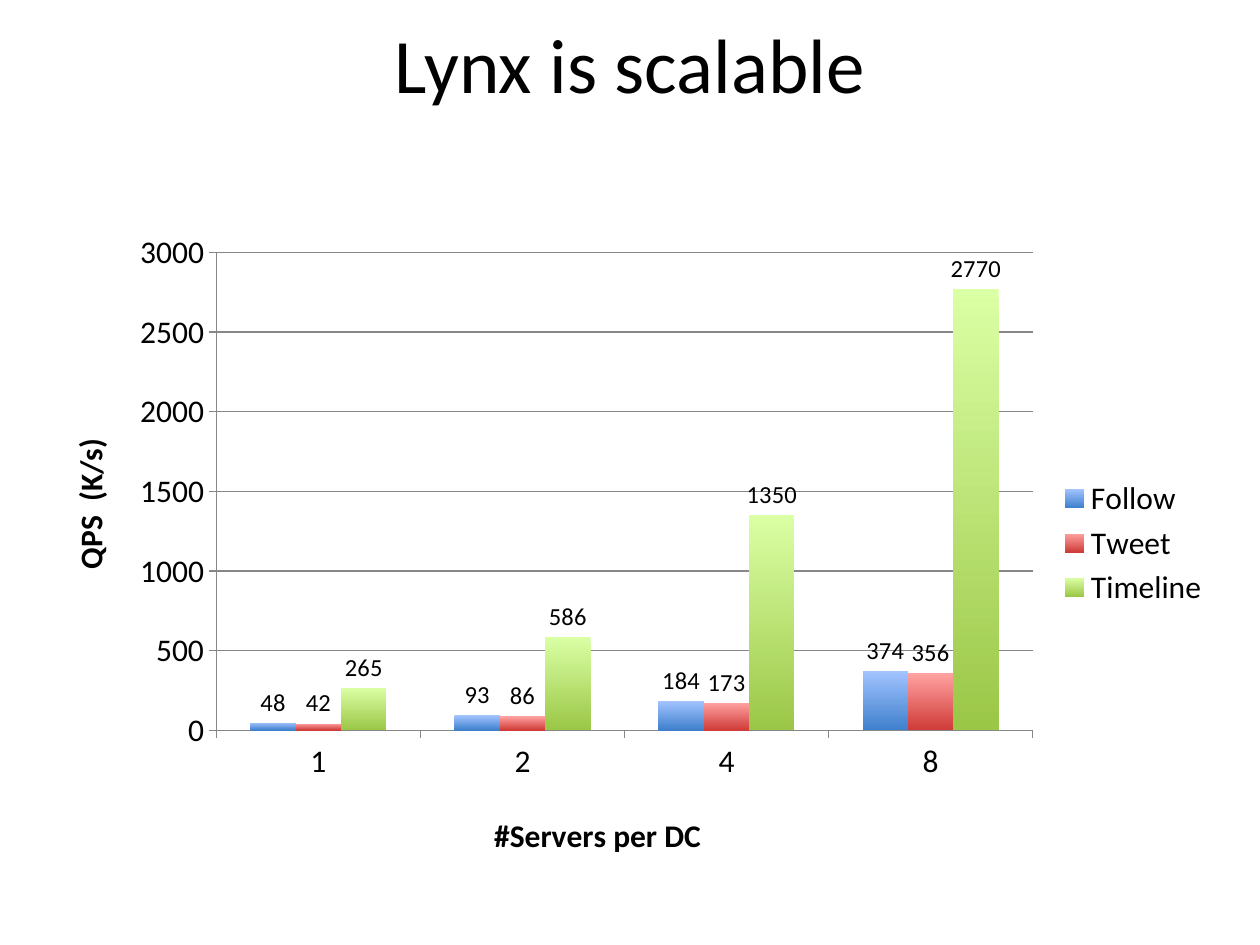
"""Build the slide with a column chart of throughput by server count."""
import pptx
import pptx.chart.data
import pptx.dml.color
import pptx.enum.chart
import pptx.enum.text
import pptx.oxml
import pptx.oxml.ns
import pptx.util

PX = 914400 / 126
FONT = "Calibri"
HUES = {
    "text": "000000",
    "line": "878787",
    "Follow": ("A3C4FF", "3F80CD"),
    "Tweet": ("FFA2A1", "CF3B38"),
    "Timeline": ("DAFFA4", "9BC747"),
}
ROWS = {
    "Follow": (48, 93, 184, 374),
    "Tweet": (42, 86, 173, 356),
    "Timeline": (265, 586, 1350, 2770),
}


def rgb(hue):
    return pptx.dml.color.RGBColor.from_string(hue)


def layout(kind="", **parts):
    inner = '<c:layoutTarget val="inner"/>' if kind else ""
    modes = '<c:xMode val="edge"/><c:yMode val="edge"/>'
    sizes = "".join(f'<c:{key} val="{val}"/>' for key, val in parts.items())
    return pptx.oxml.parse_xml(
        f'<c:layout {pptx.oxml.ns.nsdecls("c")}><c:manualLayout>'
        f"{inner}{modes}{sizes}</c:manualLayout></c:layout>"
    )


deck = pptx.Presentation()
deck.slide_width, deck.slide_height = int(1260 * PX), int(945 * PX)
slide = deck.slides.add_slide(deck.slide_layouts[6])

head = slide.shapes.add_textbox(*(int(n * PX) for n in (63, 3, 1134, 120)))
frame = head.text_frame
frame.word_wrap = True
frame.vertical_anchor = pptx.enum.text.MSO_ANCHOR.MIDDLE
para = frame.paragraphs[0]
para.text = "Lynx is scalable"
para.alignment = pptx.enum.text.PP_ALIGN.CENTER
para.font.name = FONT
para.font.size = pptx.util.Pt(44)
para.font.color.rgb = rgb(HUES["text"])

data = pptx.chart.data.CategoryChartData()
data.categories = ["1", "2", "4", "8"]
for name, vals in ROWS.items():
    data.add_series(name, vals)
chart = slide.shapes.add_chart(
    pptx.enum.chart.XL_CHART_TYPE.COLUMN_CLUSTERED,
    *(int(n * PX) for n in (39, 220, 1183, 646)), data,
).chart
chart.has_title = False
chart.font.name = FONT
chart.font.size = pptx.util.Pt(18)
chart.font.color.rgb = rgb(HUES["text"])
chart.has_legend = True
chart.legend.position = pptx.enum.chart.XL_LEGEND_POSITION.RIGHT
chart.legend.include_in_layout = False

area = chart.plots[0]
area.gap_width = 150
area.overlap = 0
area.vary_by_categories = False
for row in area.series:
    fill = row.format.fill
    fill.gradient()
    fill.gradient_angle = 270
    for stop, hue, pos in zip(fill.gradient_stops, HUES[row.name], (0, 1)):
        stop.color.rgb = rgb(hue)
        stop.position = pos
    tags = row.data_labels
    tags.show_value = True
    tags.position = pptx.enum.chart.XL_LABEL_POSITION.OUTSIDE_END
    tags.font.name = FONT
    tags.font.size = pptx.util.Pt(14)
    tags.font.color.rgb = rgb(HUES["text"])

titles = (
    (chart.category_axis, "#Servers per DC", 0.38, 0.91),
    (chart.value_axis, "QPS  (K/s)", 0.02, 0.33),
)
for axis, text, left, top in titles:
    axis.format.line.color.rgb = rgb(HUES["line"])
    axis.major_tick_mark = pptx.enum.chart.XL_TICK_MARK.OUTSIDE
    axis.minor_tick_mark = pptx.enum.chart.XL_TICK_MARK.NONE
    title = axis.axis_title
    para = title.text_frame.paragraphs[0]
    para.text = text
    para.font.name = FONT
    para.font.size = pptx.util.Pt(18)
    para.font.bold = True
    para.font.color.rgb = rgb(HUES["text"])
    node = title._element
    for old in node.findall(pptx.oxml.ns.qn("c:layout")):
        node.remove(old)
    node.find(pptx.oxml.ns.qn("c:tx")).addnext(layout(x=left, y=top))

scale = chart.value_axis
scale.minimum_scale, scale.maximum_scale, scale.major_unit = 0, 3000, 500
scale.has_major_gridlines = True
scale.major_gridlines.format.line.color.rgb = rgb(HUES["line"])
body = chart._chartSpace.chart.plotArea
for old in body.findall(pptx.oxml.ns.qn("c:layout")):
    body.remove(old)
body.insert(0, layout("inner", x=0.15, y=0.05, w=0.69, h=0.74))

deck.save("out.pptx")
